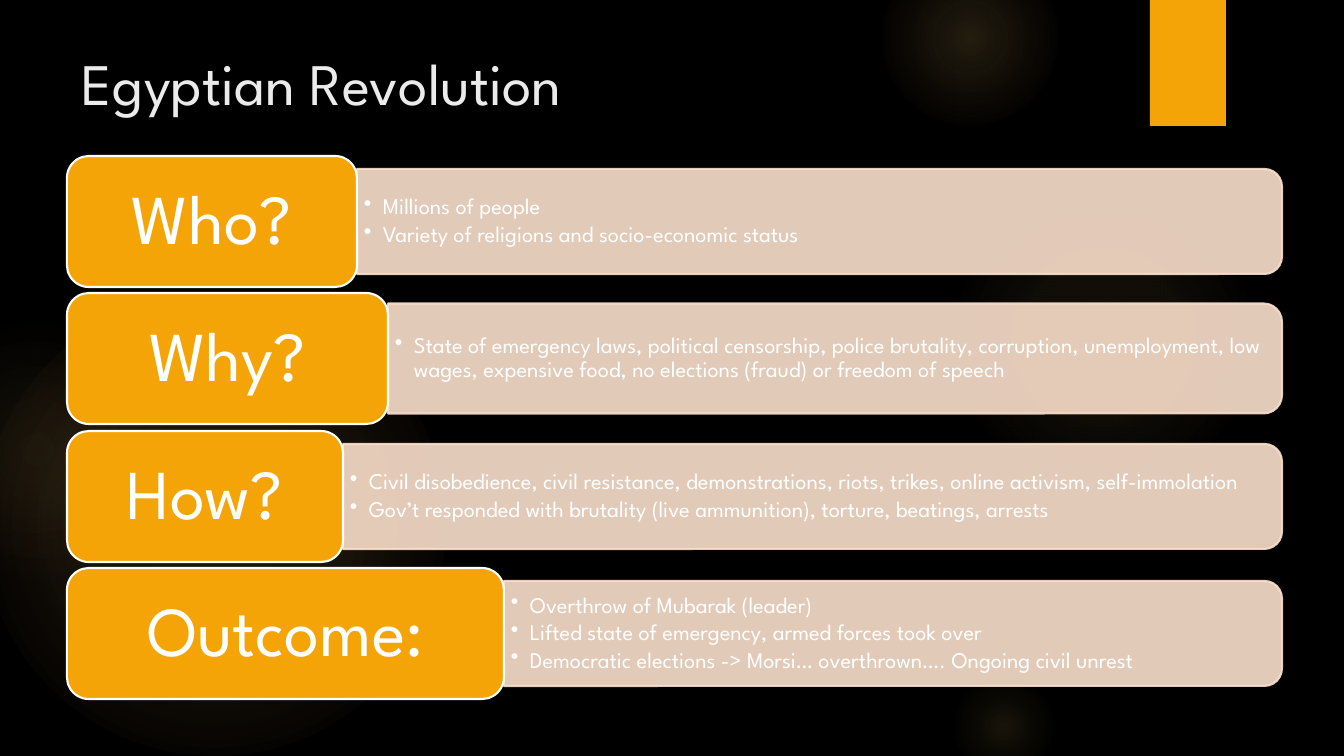
from dataclasses import dataclass

from lxml import etree
from pptx import Presentation
from pptx.dml.color import RGBColor
from pptx.enum.shapes import MSO_SHAPE
from pptx.enum.text import MSO_ANCHOR, PP_ALIGN
from pptx.oxml.ns import qn
from pptx.util import Emu, Pt

OVAL = MSO_SHAPE.OVAL
RECT = MSO_SHAPE.RECTANGLE
ROUNDED = MSO_SHAPE.ROUNDED_RECTANGLE
TWO_ROUNDED = MSO_SHAPE.ROUND_2_SAME_RECTANGLE
TOP, MIDDLE = MSO_ANCHOR.TOP, MSO_ANCHOR.MIDDLE
LEFT, CENTER = PP_ALIGN.LEFT, PP_ALIGN.CENTER
EMU_PER_PX = 914400 / 100.8


@dataclass(frozen=True)
class Theme:
    font: str = "League Spartan"
    background: str = "000000"
    accent: str = "F5A408"
    bar: str = "FBE0CC"
    glow: str = "FAC96A"
    glow_edge: str = "F59B74"
    title: str = "EBEBEB"
    text: str = "FFFFFF"
    title_size: int = 42
    label_size: int = 50
    body_size: int = 16
    line_width: float = 1.5
    bar_opacity: int = 90


THEME = Theme()

GLOWS = [
    (-17, 294, 462, [(0, THEME.glow, 11), (36, THEME.glow, 10), (75, THEME.glow, 0)]),
    (-93, 320, 260, [(0, THEME.glow, 8), (36, THEME.glow, 5), (71, THEME.glow_edge, 0)]),
    (949, 184, 310, [(0, THEME.glow, 7), (36, THEME.glow, 6), (69, THEME.glow, 0)]),
    (882, -50, 176, [(0, THEME.glow, 14), (36, THEME.glow, 7), (73, THEME.glow, 0)]),
    (949, 672, 109, [(0, THEME.glow, 10), (31, THEME.glow, 5), (66, THEME.glow, 0)]),
]

ROWS = [
    ("Who?", 290, 105, [
        "Millions of people",
        "Variety of religions and socio-economic status",
    ]),
    ("Why?", 321, 110, [
        "State of emergency laws, political censorship, police brutality, corruption, "
        "unemployment, low wages, expensive food, no elections (fraud) or freedom of speech",
    ]),
    ("How?", 276, 105, [
        "Civil disobedience, civil resistance, demonstrations, riots, trikes, "
        "online activism, self-immolation",
        "Gov’t responded with brutality (live ammunition), torture, beatings, arrests",
    ]),
    ("Outcome:", 437, 105, [
        "Overthrow of Mubarak (leader)",
        "Lifted state of emergency, armed forces took over",
        "Democratic elections -> Morsi… overthrown…. Ongoing civil unrest",
    ]),
]
ROWS_LEFT, ROWS_TOP, ROWS_RIGHT = 67, 156, 1282
LABEL_HEIGHT = 131
TWO_ROW_PITCH = 275


def px(n):
    return Emu(round(n * EMU_PER_PX))


def rgb(color):
    return RGBColor.from_string(color)


def set_alpha(clr, percent):
    etree.SubElement(clr, qn("a:alpha"), val=str(percent * 1000))


def add_box(s, kind, x, y, w, h, fill=None, line=None):
    sp = s.shapes.add_shape(kind, px(x), px(y), px(w), px(h))
    sp.shadow.inherit = False
    if fill:
        sp.fill.solid()
        sp.fill.fore_color.rgb = rgb(fill)
    if line:
        sp.line.color.rgb = rgb(line)
        sp.line.width = Pt(THEME.line_width)
    else:
        sp.line.fill.background()
    return sp


def set_frame(tf, anchor, inset_x, inset_y):
    tf.word_wrap = True
    tf.vertical_anchor = anchor
    tf.margin_left = tf.margin_right = px(inset_x)
    tf.margin_top = tf.margin_bottom = px(inset_y)


def add_run(p, text, size, color, align):
    p.alignment = align
    p.line_spacing = 0.9
    r = p.add_run()
    r.text = text
    r.font.name = THEME.font
    r.font.size = Pt(size)
    r.font.color.rgb = rgb(color)


def add_glow(s, x, y, size, stops):
    sp = add_box(s, OVAL, x, y, size, size)
    grad = etree.Element(qn("a:gradFill"), rotWithShape="1")
    gs_list = etree.SubElement(grad, qn("a:gsLst"))
    for position, color, opacity in stops:
        gs = etree.SubElement(gs_list, qn("a:gs"), pos=str(position * 1000))
        set_alpha(etree.SubElement(gs, qn("a:srgbClr"), val=color), opacity)
    circle = etree.SubElement(grad, qn("a:path"), path="circle")
    etree.SubElement(circle, qn("a:fillToRect"), l="50000", t="50000", r="50000", b="50000")
    sp._element.spPr.find(qn("a:prstGeom")).addnext(grad)


def add_title(s, text):
    sp = s.shapes.title
    sp.left, sp.top, sp.width, sp.height = px(72), px(50), px(1037), px(154)
    set_frame(sp.text_frame, TOP, 10, 5)
    add_run(sp.text_frame.paragraphs[0], text, THEME.title_size, THEME.title, LEFT)


def add_bar(s, x, mid, w, h):
    sp = add_box(s, TWO_ROUNDED, x + (w - h) / 2, mid - w / 2, h, w, THEME.bar, THEME.bar)
    sp.rotation = 90
    for clr in sp._element.spPr.iter(qn("a:srgbClr")):
        set_alpha(clr, THEME.bar_opacity)


def add_bullets(s, x, y, w, h, items):
    tf = s.shapes.add_textbox(px(x), px(y), px(w), px(h)).text_frame
    set_frame(tf, MIDDLE, 7, 3)
    for i, item in enumerate(items):
        p = tf.paragraphs[0] if i == 0 else tf.add_paragraph()
        add_run(p, item, THEME.body_size, THEME.text, LEFT)
        p.space_after = Pt(2.4)
        pPr = p._p.get_or_add_pPr()
        pPr.set("marL", str(px(19)))
        pPr.set("indent", str(px(-19)))
        etree.SubElement(pPr, qn("a:buChar"), char="•")


def add_label(s, x, y, w, text):
    sp = add_box(s, ROUNDED, x, y, w, LABEL_HEIGHT, THEME.accent, THEME.text)
    set_frame(sp.text_frame, MIDDLE, 28, 17)
    add_run(sp.text_frame.paragraphs[0], text, THEME.label_size, THEME.text, CENTER)


def add_row(s, y, label, label_width, bar_height, items):
    x = ROWS_LEFT + label_width
    w = ROWS_RIGHT - x
    mid = y + LABEL_HEIGHT / 2
    add_bar(s, x, mid, w, bar_height)
    add_bullets(s, x, mid - bar_height / 2 + 5, w - 5, bar_height - 10, items)
    add_label(s, ROWS_LEFT, y, label_width, label)


def main():
    prs = Presentation()
    prs.slide_width, prs.slide_height = px(1344), px(756)
    s = prs.slides.add_slide(prs.slide_layouts[5])
    s.background.fill.solid()
    s.background.fill.fore_color.rgb = rgb(THEME.background)
    for glow in GLOWS:
        add_glow(s, *glow)
    add_box(s, RECT, 1150, 0, 76, 126, THEME.accent)
    add_title(s, "Egyptian Revolution")
    for i, row in enumerate(ROWS):
        add_row(s, ROWS_TOP + i * TWO_ROW_PITCH // 2, *row)
    prs.save("out.pptx")


if __name__ == "__main__":
    main()
